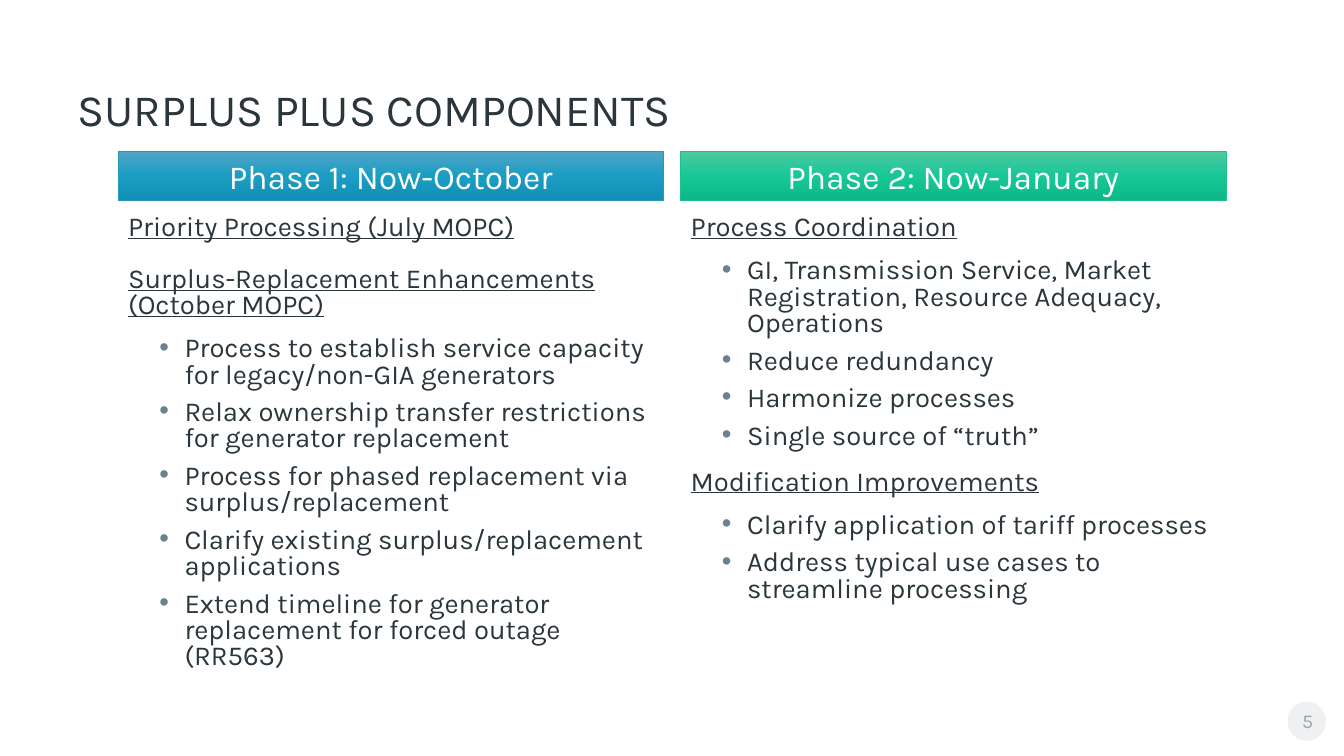
from copy import deepcopy
from dataclasses import dataclass

from lxml.etree import SubElement
from pptx import Presentation
from pptx.dml.color import RGBColor
from pptx.enum.shapes import MSO_SHAPE as Shape
from pptx.enum.text import MSO_ANCHOR as Anchor, MSO_AUTO_SIZE as AutoSize, PP_ALIGN as Align
from pptx.oxml.ns import qn
from pptx.util import Inches, Pt


@dataclass(frozen=True)
class Theme:
    font: str = "Karla"
    ink: str = "2A363B"
    white: str = "FFFFFF"
    bullet: str = "66838F"
    badge: str = "EEF0F1"
    number: str = "99A4AD"
    blue: tuple = ("50A5C6", "1B9DC3", "128FB4")
    blue_line: str = "2399BB"
    green: tuple = ("4EC99F", "17C796", "0DB888")
    green_line: str = "1FBF92"
    title_size: float = 32
    banner_size: float = 24
    body_size: float = 19.6
    number_size: float = 14


HEADING = dict(level=0, line_spacing=0.8, space_before=Pt(12), space_after=Pt(6))
BULLET = dict(level=1, line_spacing=0.8, space_before=Pt(6), space_after=Pt(2))


def apply(target, values):
    for name, value in values.items():
        setattr(target, name, value)


class SlideBuilder:
    def __init__(self, presentation, theme):
        self.theme = theme
        self.slide = presentation.slides.add_slide(presentation.slide_layouts[3])

    def place(self, shape, box):
        names = ("left", "top", "width", "height")
        apply(shape, dict(zip(names, map(Inches, box))))

    def frame(self, shape, anchor):
        apply(shape.text_frame, dict(auto_size=AutoSize.NONE, word_wrap=True,
                                     vertical_anchor=anchor))
        return shape.text_frame

    def add_text(self, paragraph, text, size, color, underline=False, **layout):
        apply(paragraph, layout)
        run = paragraph.add_run()
        run.text = text
        apply(run.font, dict(name=self.theme.font, size=Pt(size), underline=underline))
        run.font.color.rgb = RGBColor.from_string(color)

    def title(self, text, box):
        shape = self.slide.shapes.title
        self.place(shape, box)
        paragraph = self.frame(shape, Anchor.MIDDLE).paragraphs[0]
        self.add_text(paragraph, text, self.theme.title_size, self.theme.ink,
                      alignment=Align.LEFT, line_spacing=0.75)

    def mark(self, paragraph, bulleted):
        properties = paragraph._p.get_or_add_pPr()
        properties.set("marL", str(Inches(0.56 if bulleted else 0)))
        properties.set("indent", str(Inches(-0.25 if bulleted else 0)))
        if not bulleted:
            SubElement(properties, qn("a:buNone"))
            return
        color = SubElement(properties, qn("a:buClr"))
        SubElement(color, qn("a:srgbClr"), val=self.theme.bullet)
        SubElement(properties, qn("a:buFont"), typeface="Arial")
        SubElement(properties, qn("a:buChar"), char="•")

    def outline(self, index, sections, box):
        shape = self.slide.placeholders[index]
        self.place(shape, box)
        frame = self.frame(shape, Anchor.TOP)
        lines = [(text, level) for heading, bullets in sections
                 for text, level in [(heading, HEADING), *((item, BULLET) for item in bullets)]]
        for position, (text, level) in enumerate(lines):
            paragraph = frame.add_paragraph() if position else frame.paragraphs[0]
            self.mark(paragraph, level is BULLET)
            self.add_text(paragraph, text, self.theme.body_size, self.theme.ink,
                          underline=level is HEADING, alignment=Align.LEFT, **level)
        frame.paragraphs[0].space_before = Pt(0)

    def banner(self, text, box, colors, line_color):
        shape = self.slide.shapes.add_shape(Shape.RECTANGLE, *map(Inches, box))
        shape.shadow.inherit = False
        shape.fill.gradient()
        shape.fill.gradient_angle = 270
        stops = shape._element.spPr.find(qn("a:gradFill")).find(qn("a:gsLst"))
        stops.append(deepcopy(stops[-1]))
        for stop, position, color in zip(shape.fill.gradient_stops, (0, 0.5, 1), colors):
            stop.position = position
            stop.color.rgb = RGBColor.from_string(color)
        shape.line.color.rgb = RGBColor.from_string(line_color)
        shape.line.width = Pt(0.5)
        paragraph = self.frame(shape, Anchor.MIDDLE).paragraphs[0]
        self.add_text(paragraph, text, self.theme.banner_size, self.theme.white,
                      alignment=Align.CENTER)

    def page_number(self, text):
        badge = self.slide.shapes.add_shape(
            Shape.OVAL, *map(Inches, (12.77, 6.96, 0.38, 0.39)))
        badge.shadow.inherit = False
        badge.fill.solid()
        badge.fill.fore_color.rgb = RGBColor.from_string(self.theme.badge)
        badge.line.fill.background()
        label = self.slide.shapes.add_textbox(*map(Inches, (12.77, 6.92, 0.4, 0.4)))
        frame = self.frame(label, Anchor.BOTTOM)
        apply(frame, dict(margin_left=Inches(0.03), margin_right=Inches(0.03)))
        self.add_text(frame.paragraphs[0], text, self.theme.number_size, self.theme.number,
                      alignment=Align.CENTER)


def main():
    presentation = Presentation()
    apply(presentation, dict(slide_width=Inches(13.33), slide_height=Inches(7.5)))
    theme = Theme()
    builder = SlideBuilder(presentation, theme)
    builder.page_number("5")
    builder.title("SURPLUS PLUS COMPONENTS", (0.67, 0.62, 11.97, 1.03))

    phases = [
        ("Phase 1: Now-October", 1.17, 5.41, theme.blue, theme.blue_line, [
            ("Priority Processing (July MOPC)", []),
            ("Surplus-Replacement Enhancements (October MOPC)", [
                "Process to establish service capacity for legacy/non-GIA generators",
                "Relax ownership transfer restrictions for generator replacement",
                "Process for phased replacement via surplus/replacement",
                "Clarify existing surplus/replacement applications",
                "Extend timeline for generator replacement for forced outage (RR563)",
            ]),
        ]),
        ("Phase 2: Now-January", 6.75, 5.43, theme.green, theme.green_line, [
            ("Process Coordination", [
                "GI, Transmission Service, Market Registration, Resource Adequacy, Operations",
                "Reduce redundancy",
                "Harmonize processes",
                "Single source of “truth”",
            ]),
            ("Modification Improvements", [
                "Clarify application of tariff processes",
                "Address typical use cases to streamline processing",
            ]),
        ]),
    ]
    for index, (name, left, width, colors, line_color, sections) in enumerate(phases, 1):
        builder.outline(index, sections, (left, 2.09, width, 4.79))
        builder.banner(name, (left, 1.5, 5.41, 0.49), colors, line_color)

    presentation.save("out.pptx")


if __name__ == "__main__":
    main()
